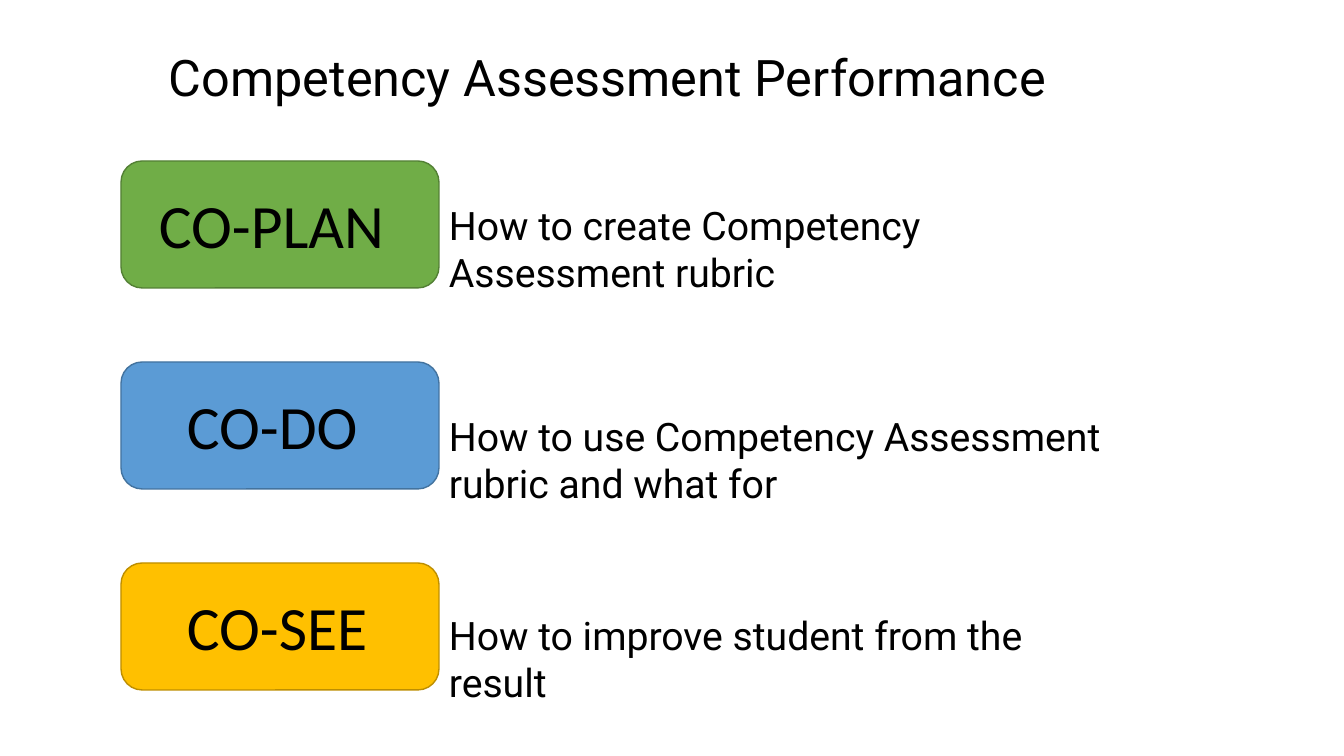
from pptx import Presentation
from pptx.dml.color import RGBColor
from pptx.enum.shapes import MSO_SHAPE
from pptx.enum.text import MSO_AUTO_SIZE
from pptx.util import Emu, Pt

# Content
TITLE = "Competency Assessment Performance"
# label, label left, label width, description, description offset, description width, colour
STEPS = [
    ("CO-PLAN", 149, 261, "How to create Competency Assessment rubric", 35, 614, "green"),
    ("CO-DO", 177, 205, "How to use Competency Assessment rubric and what for", 45, 721, "blue"),
    ("CO-SEE", 177, 219, "How to improve student from the result", 43, 614, "gold"),
]
COLOURS = {
    "text": "000000",
    "green": "70AD47", "green edge": "538035",
    "blue": "5B9BD5", "blue edge": "43739E",
    "gold": "FFC000", "gold edge": "BD8E00",
}

# Layout in px
SCALE = 914400 / 100.8
CARD_LEFT, CARD_TOP, CARD_WIDTH, CARD_HEIGHT = 121, 161, 318, 127
ROW_PITCH = 201
LABEL_OFFSET = 21


def px(length):
    return Emu(round(length * SCALE))


def colour(name):
    return RGBColor.from_string(COLOURS[name])


def add_card(page, top, name):
    card = page.shapes.add_shape(MSO_SHAPE.ROUNDED_RECTANGLE, px(CARD_LEFT), px(top),
                                 px(CARD_WIDTH), px(CARD_HEIGHT))
    card.shadow.inherit = False
    card.fill.solid()
    card.fill.fore_color.rgb = colour(name)
    card.line.color.rgb = colour(name + " edge")
    card.line.width = Pt(1)


def add_text(page, text, left, top, width, height, font, size):
    box = page.shapes.add_textbox(px(left), px(top), px(width), px(height))
    box.text_frame.word_wrap = True
    box.text_frame.auto_size = MSO_AUTO_SIZE.SHAPE_TO_FIT_TEXT
    span = box.text_frame.paragraphs[0].add_run()
    span.text = text
    span.font.name = font
    span.font.size = Pt(size)
    span.font.color.rgb = colour("text")


def main():
    deck = Presentation()
    deck.slide_width, deck.slide_height = px(1344), px(756)
    page = deck.slides.add_slide(deck.slide_layouts[6])

    # Title
    add_text(page, TITLE, 159, 41, 1041, 72, "Roboto", 36)

    # One row per step: card, label, description
    for row, (label, left, width, description, offset, reach, name) in enumerate(STEPS):
        top = CARD_TOP + row * ROW_PITCH
        add_card(page, top, name)
        add_text(page, label, left, top + LABEL_OFFSET, width, 85, "Calibri", 44)
        add_text(page, description, CARD_LEFT + CARD_WIDTH, top + offset, reach, 57,
                 "Roboto", 28)

    deck.save("out.pptx")


if __name__ == "__main__":
    main()
